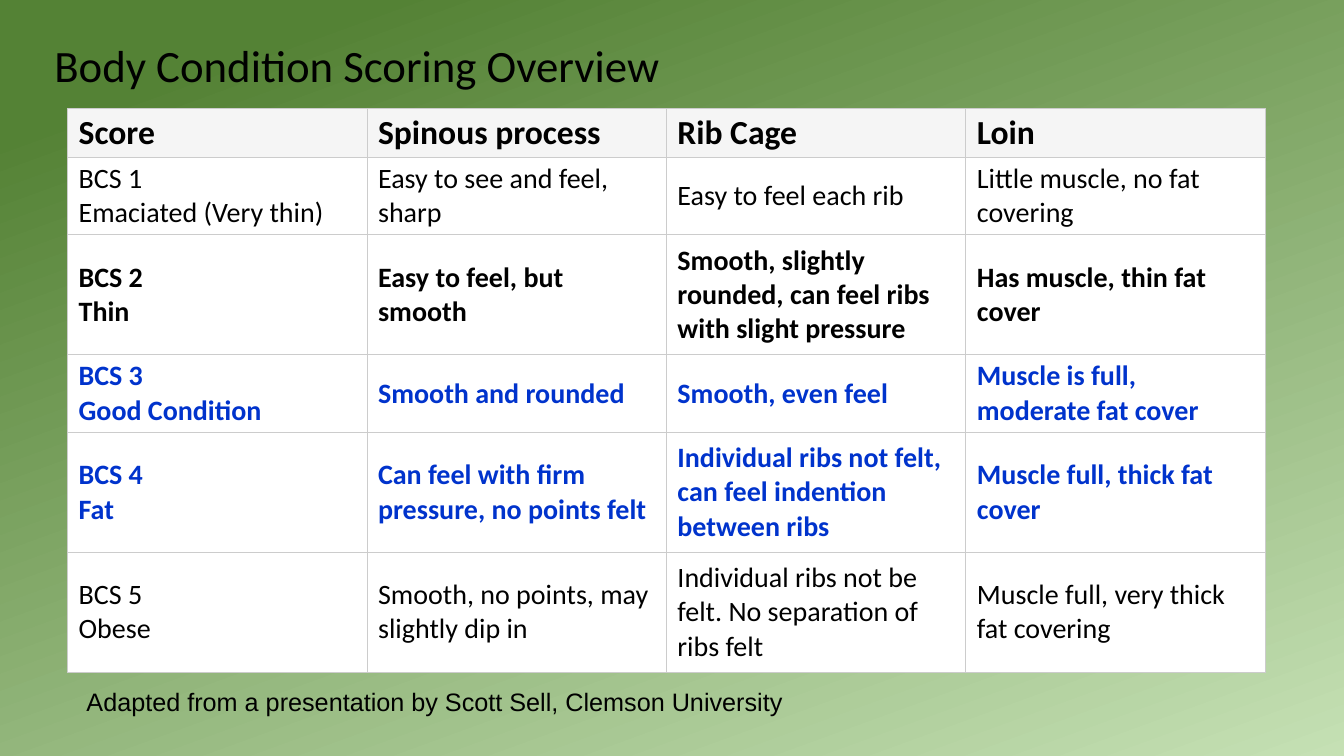
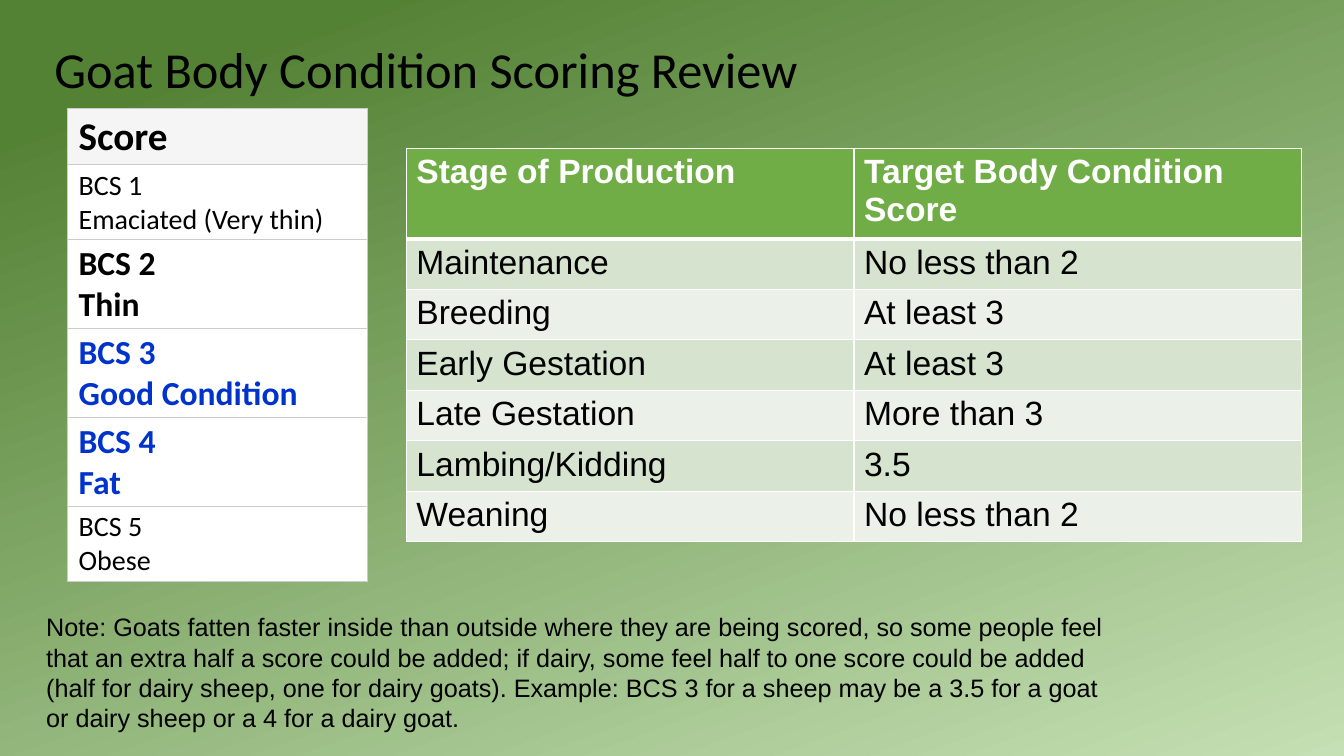
"""Build two slides on body condition scoring for goats and sheep."""
from lxml import etree
from pptx import Presentation
from pptx.dml.color import RGBColor
from pptx.enum.text import MSO_ANCHOR, MSO_AUTO_SIZE
from pptx.oxml.ns import qn
from pptx.util import Inches, Pt

TOP, MIDDLE = MSO_ANCHOR.TOP, MSO_ANCHOR.MIDDLE
GROW = MSO_AUTO_SIZE.SHAPE_TO_FIT_TEXT
BLACK, WHITE = RGBColor(0, 0, 0), RGBColor(255, 255, 255)
BLUE = RGBColor(0x00, 0x33, 0xCC)
DARK_GREEN, PALE_GREEN = RGBColor(0x54, 0x82, 0x35), RGBColor(0xC5, 0xE0, 0xB4)
HEAD_GREEN = RGBColor(0x70, 0xAD, 0x47)
BANDS = RGBColor(0xD5, 0xE3, 0xCF), RGBColor(0xEB, 0xF1, 0xE9)
HEAD_GREY, RULE_GREY = RGBColor(0xF5, 0xF5, 0xF5), RGBColor(0xCC, 0xCC, 0xCC)
HEADING, BODY = "Calibri", "Arial"

SCORE_HEAD = ["Score", "Spinous process", "Rib Cage", "Loin"]
SCORES = [
    (BLACK, False, ["BCS 1\nEmaciated (Very thin)", "Easy to see and feel, sharp",
                    "Easy to feel each rib", "Little muscle, no fat covering"]),
    (BLACK, True, ["BCS 2\nThin", "Easy to feel, but smooth",
                   "Smooth, slightly rounded, can feel ribs with slight pressure",
                   "Has muscle, thin fat cover"]),
    (BLUE, True, ["BCS 3\nGood Condition", "Smooth and rounded",
                  "Smooth, even feel", "Muscle is full, moderate fat cover"]),
    (BLUE, True, ["BCS 4\nFat", "Can feel with firm pressure, no points felt",
                  "Individual ribs not felt, can feel indention between ribs",
                  "Muscle full, thick fat cover"]),
    (BLACK, False, ["BCS 5\nObese", "Smooth, no points, may slightly dip in",
                    "Individual ribs not be felt. No separation of ribs felt",
                    "Muscle full, very thick fat covering"]),
]
STAGE_HEAD = ["Stage of Production", "Target Body Condition Score"]
STAGES = [
    ["Maintenance", "No less than 2"],
    ["Breeding", "At least 3"],
    ["Early Gestation", "At least 3"],
    ["Late Gestation", "More than 3"],
    ["Lambing/Kidding", "3.5"],
    ["Weaning", "No less than 2"],
]
CREDIT = "Adapted from a presentation by Scott Sell, Clemson University"
NOTE = (
    "Note: Goats fatten faster inside than outside where they are being scored, "
    "so some people feel that an extra half a score could be added; if dairy, some "
    "feel half to one score could be added (half for dairy sheep, one for dairy "
    "goats). Example: BCS 3 for a sheep may be a 3.5 for a goat or dairy sheep or "
    "a 4 for a dairy goat."
)


def write(tf, text, font=BODY, size=18, color=BLACK, bold=False):
    """Put text in a frame, one paragraph per line."""
    for i, line in enumerate(text.split("\n")):
        p = tf.paragraphs[0] if i == 0 else tf.add_paragraph()
        r = p.add_run()
        r.text = line
        r.font.name, r.font.size, r.font.bold = font, Pt(size), bold
        r.font.color.rgb = color


def add_text(s, box, text, **fmt):
    """Add a wrapping text box."""
    tf = s.shapes.add_textbox(*map(Inches, box)).text_frame
    tf.word_wrap, tf.auto_size = True, GROW
    write(tf, text, **fmt)


def set_borders(cell, color, widths):
    """Draw the left, right, top and bottom edges of a cell."""
    tc_pr = cell._tc.get_or_add_tcPr()
    for side, width in zip("LRTB", widths):
        ln = etree.SubElement(tc_pr, qn(f"a:ln{side}"), w=str(Pt(width)))
        fill = etree.SubElement(ln, qn("a:solidFill"))
        etree.SubElement(fill, qn("a:srgbClr"), val=str(color))


def add_grid(s, left, top, col_width, heights, rows, rule, anchor=TOP, inset=(0.1, 0.05)):
    """Add a table from (texts, fill, edge widths, text format) rows."""
    n_cols = len(rows[0][0])
    table = s.shapes.add_table(
        len(rows), n_cols, Inches(left), Inches(top),
        Inches(col_width * n_cols), Inches(sum(heights))).table
    table.horz_banding = False
    for col in table.columns:
        col.width = Inches(col_width)
    for row, height, (texts, fill, widths, fmt) in zip(table.rows, heights, rows):
        row.height = Inches(height)
        for cell, text in zip(row.cells, texts):
            set_borders(cell, rule, widths)
            cell.fill.solid()
            cell.fill.fore_color.rgb = fill
            cell.vertical_anchor = anchor
            cell.margin_left = cell.margin_right = Inches(inset[0])
            cell.margin_top = cell.margin_bottom = Inches(inset[1])
            write(cell.text_frame, text, **fmt)


def add_scores(s, n_cols, heights, head_size, bold_size):
    """Add the score table with its first n_cols columns."""
    edges = [0.75] * 4
    rows = [(SCORE_HEAD[:n_cols], HEAD_GREY, edges,
             dict(font=HEADING, size=head_size, bold=True))]
    for color, bold, texts in SCORES:
        fmt = dict(font=HEADING, size=bold_size if bold else 20, color=color, bold=bold)
        rows.append((texts[:n_cols], WHITE, edges, fmt))
    add_grid(s, 0.67, 1.08, 2.97, heights, rows, RULE_GREY, MIDDLE, (0.11, 0.04))


def add_stages(s):
    """Add the banded table of target scores."""
    rows = [(STAGE_HEAD, HEAD_GREEN, [1, 1, 1, 3],
             dict(size=24, color=WHITE, bold=True))]
    for i, texts in enumerate(STAGES):
        rows.append((texts, BANDS[i % 2], [1, 1, 1 if i else 3, 1], dict(size=24)))
    add_grid(s, 4.03, 1.47, 4.44, [0.9] + [0.5] * len(STAGES), rows, WHITE)


def set_background(master):
    """Give every slide the green gradient."""
    fill = master.background.fill
    fill.gradient()
    fill.gradient_angle = 290
    for stop, position, color in zip(
            fill.gradient_stops, (0.11, 1), (DARK_GREEN, PALE_GREEN)):
        stop.position, stop.color.rgb = position, color


def add_slide(prs, title, size, height):
    """Add a blank slide with its title."""
    s = prs.slides.add_slide(prs.slide_layouts[6])
    add_text(s, (0.44, 0.33, 12.11, height), title, font=HEADING, size=size)
    return s


def main():
    """Build and save the slides."""
    prs = Presentation()
    prs.slide_width, prs.slide_height = Inches(13.33), Inches(7.5)
    set_background(prs.slide_master)

    s = add_slide(prs, "Body Condition Scoring Overview", 32, 0.64)
    add_scores(s, 4, [0.48, 0.77, 1.19, 0.77, 1.19, 1.19], 24, 20)
    add_text(s, (0.76, 6.76, 8.24, 0.4), CREDIT)

    s = add_slide(prs, "Goat Body Condition Scoring Review", 36, 0.71)
    add_scores(s, 1, [0.55, 0.75, 0.88, 0.88, 0.88, 0.75], 28, 24)
    add_stages(s)
    add_text(s, (0.36, 6.02, 10.76, 1.31), NOTE)

    prs.save("out.pptx")


if __name__ == "__main__":
    main()
